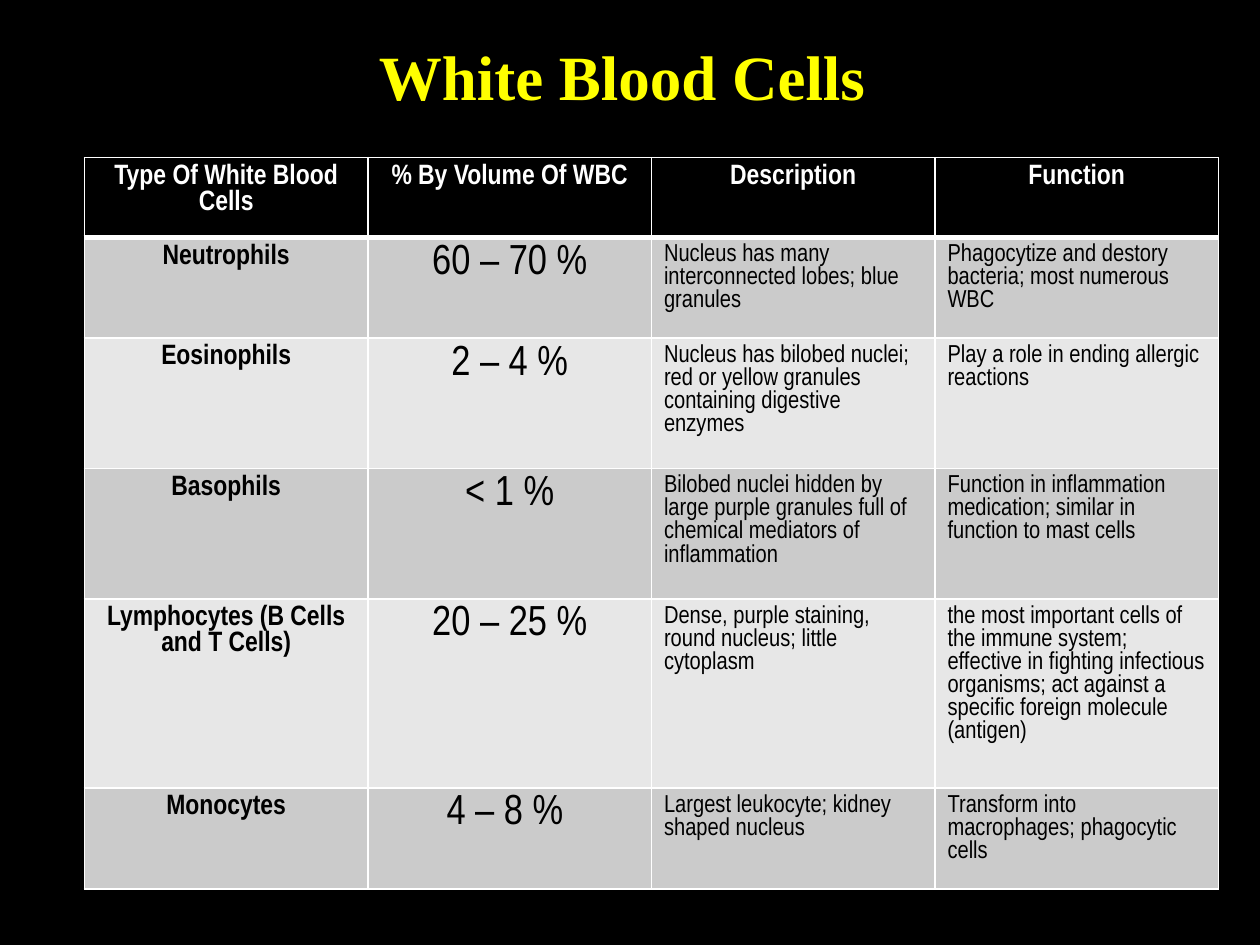
import pptx
import pptx.util
import pptx.dml.color
import pptx.enum.text
import pptx.oxml
import pptx.oxml.ns
from dataclasses import dataclass

Inches = pptx.util.Inches
Pt = pptx.util.Pt
RGBColor = pptx.dml.color.RGBColor
PP_ALIGN = pptx.enum.text.PP_ALIGN


@dataclass(frozen=True)
class Theme:
    black: str = "000000"
    white: str = "FFFFFF"
    yellow: str = "FFFF00"
    bands: tuple = ("CBCBCB", "E7E7E7")
    title_font: str = "Times New Roman"
    table_font: str = "Arial Narrow"
    title_size: int = 36
    label_size: int = 16
    percent_size: int = 24
    body_size: int = 14


theme = Theme()


def write_text(text_frame, text, font_name, size, color, bold, alignment):
    text_frame.text = text
    paragraph = text_frame.paragraphs[0]
    paragraph.alignment = alignment
    font = paragraph.runs[0].font
    font.name = font_name
    font.size = Pt(size)
    font.bold = bold
    font.color.rgb = RGBColor.from_string(color)


def add_border(cell, side, width):
    border = pptx.oxml.parse_xml(
        f'<a:{side} {pptx.oxml.ns.nsdecls("a")} w="{Pt(width)}">'
        f'<a:solidFill><a:srgbClr val="{theme.white}"/></a:solidFill></a:{side}>'
    )
    cell._tc.get_or_add_tcPr().append(border)


presentation = pptx.Presentation()
presentation.slide_width = Inches(10)
presentation.slide_height = Inches(7.5)
slide = presentation.slides.add_slide(presentation.slide_layouts[6])
slide.background.fill.solid()
slide.background.fill.fore_color.rgb = RGBColor.from_string(theme.black)

title = slide.shapes.add_textbox(Inches(0), Inches(0.25), Inches(10), Inches(0.7))
title.text_frame.word_wrap = True
write_text(title.text_frame, "White Blood Cells ", theme.title_font,
           theme.title_size, theme.yellow, True, PP_ALIGN.CENTER)

cell_types = [
    ("Type Of White Blood Cells", "% By Volume Of WBC", "Description", "Function"),
    ("Neutrophils", "60 – 70 %",
     "Nucleus has many interconnected lobes; blue granules",
     "Phagocytize and destory bacteria; most numerous WBC"),
    ("Eosinophils", "2 – 4 %",
     "Nucleus has bilobed nuclei; red or yellow granules containing digestive enzymes",
     "Play a role in ending allergic reactions"),
    ("Basophils", "< 1 %",
     "Bilobed nuclei hidden by large purple granules full of chemical mediators of inflammation",
     "Function in inflammation medication; similar in function to mast cells"),
    ("Lymphocytes (B Cells and T Cells)", "20 – 25 %",
     "Dense, purple staining, round nucleus; little cytoplasm",
     "the most important cells of the immune system; effective in fighting infectious "
     "organisms; act against a specific foreign molecule (antigen)"),
    ("Monocytes", "4 – 8 % ",
     "Largest leukocyte; kidney shaped nucleus",
     "Transform into macrophages; phagocytic cells"),
]
row_heights = [0.63, 0.8, 1.03, 1.03, 1.5, 0.8]
column_styles = [
    (theme.label_size, True, PP_ALIGN.CENTER),
    (theme.percent_size, False, PP_ALIGN.CENTER),
    (theme.body_size, False, PP_ALIGN.LEFT),
    (theme.body_size, False, PP_ALIGN.LEFT),
]

table = slide.shapes.add_table(
    len(cell_types), len(column_styles),
    Inches(0.67), Inches(1.25), Inches(9), Inches(sum(row_heights))
).table

for row_index, (texts, height) in enumerate(zip(cell_types, row_heights)):
    table.rows[row_index].height = Inches(height)
    is_header = row_index == 0
    for column_index, text in enumerate(texts):
        cell = table.cell(row_index, column_index)
        size, bold, alignment = column_styles[0 if is_header else column_index]
        write_text(cell.text_frame, text, theme.table_font, size,
                   theme.white if is_header else theme.black, bold, alignment)
        for side in ("lnL", "lnR", "lnT", "lnB"):
            below_header = (row_index, side) in ((0, "lnB"), (1, "lnT"))
            add_border(cell, side, 3 if below_header else 1)
        cell.fill.solid()
        fill_color = theme.black if is_header else theme.bands[(row_index - 1) % 2]
        cell.fill.fore_color.rgb = RGBColor.from_string(fill_color)

presentation.save("out.pptx")
